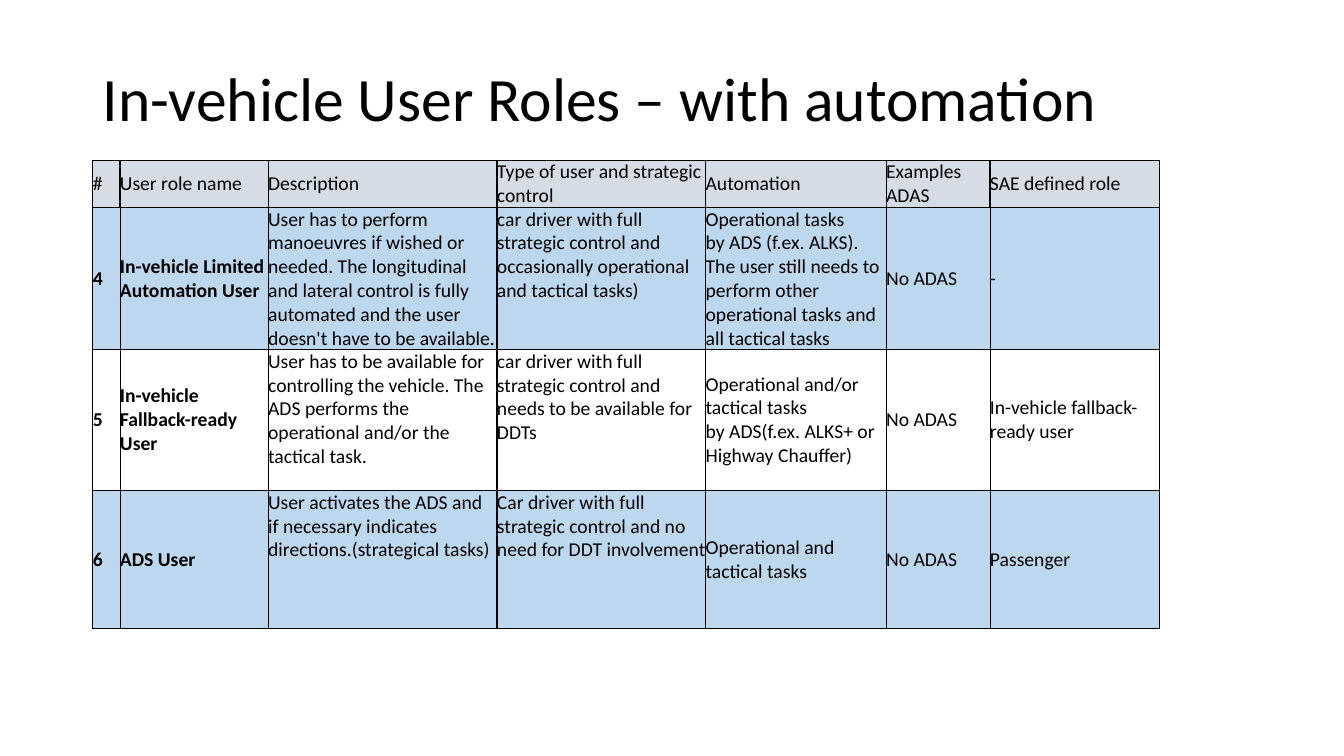
from copy import deepcopy

from lxml.etree import SubElement
from pptx import Presentation
from pptx.dml.color import RGBColor
from pptx.enum.text import MSO_ANCHOR as Anchor
from pptx.oxml.ns import qn
from pptx.util import Inches, Pt

HEADER_FILL = "D6DCE4"
BAND_FILL = "BDD7EE"
LINE_COLOR = "000000"

COLUMN_WIDTHS = [0.27, 1.47, 2.27, 2.07, 1.79, 1.03, 1.68]
ROW_HEIGHTS = [0.46, 1.41, 1.4, 1.37]
ROW_FILLS = [HEADER_FILL, BAND_FILL, None, BAND_FILL]
ROLES = [
    ["#", "User role name", "Description", "Type of user and strategic control",
     "Automation", "Examples ADAS", "SAE defined role"],
    ["4", "In-vehicle Limited Automation User",
     "User has to perform manoeuvres if wished or needed. The longitudinal and lateral "
     "control is fully automated and the user doesn't have to be available.",
     "car driver with full strategic control and occasionally operational and tactical tasks)",
     "Operational tasks\nby ADS (f.ex. ALKS).\nThe user still needs to perform other "
     "operational tasks and all tactical tasks",
     "No ADAS", "-"],
    ["5", "In-vehicle Fallback-ready User",
     "User has to be available for controlling the vehicle. The ADS performs the "
     "operational and/or the tactical task.",
     "car driver with full strategic control and needs to be available for DDTs",
     "Operational and/or tactical tasks\nby ADS(f.ex. ALKS+ or Highway Chauffer)",
     "No ADAS", "In-vehicle fallback-ready user"],
    ["6", "ADS User",
     "User activates the ADS and if necessary indicates directions.(strategical tasks)",
     "Car driver with full strategic control and no need for DDT involvement",
     "Operational and tactical tasks", "No ADAS", "Passenger"],
]


def write_text(text_frame, text, size=14, bold=False, color="000000", line_spacing=None):
    """Fill the first paragraph; line feeds become line breaks of the same size."""
    paragraph = text_frame.paragraphs[0]
    paragraph.text = text
    if line_spacing:
        paragraph.line_spacing = line_spacing
    for run in paragraph.runs:
        run.font.name = "Calibri"
        run.font.size = Pt(size)
        run.font.bold = bold
        run.font.color.rgb = RGBColor.from_string(color)
    for line_break in paragraph._p.findall(qn("a:br")):
        line_break.append(deepcopy(paragraph.runs[0].font._element))


def set_borders(cell, widths):
    """Draw the left, right, top and bottom borders with widths in points."""
    properties = cell._tc.get_or_add_tcPr()
    for side, width in zip("LRTB", widths):
        line = SubElement(properties, qn(f"a:ln{side}"), w=str(Pt(width)))
        fill = SubElement(line, qn("a:solidFill"))
        SubElement(fill, qn("a:srgbClr"), val=LINE_COLOR)


presentation = Presentation()
presentation.slide_width = Inches(13.33)
presentation.slide_height = Inches(7.5)
slide = presentation.slides.add_slide(presentation.slide_layouts[6])

title = slide.shapes.add_textbox(Inches(0.92), Inches(0.4), Inches(11.5), Inches(1.22))
title.text_frame.word_wrap = True
title.text_frame.vertical_anchor = Anchor.MIDDLE
write_text(title.text_frame, "In-vehicle User Roles – with automation", size=44, line_spacing=0.9)

table_frame = slide.shapes.add_table(
    len(ROLES), len(COLUMN_WIDTHS), Inches(0.92), Inches(1.59),
    Inches(sum(COLUMN_WIDTHS)), Inches(sum(ROW_HEIGHTS)))
table = table_frame.table
table.first_row = False
table.horz_banding = False
for column, width in zip(table.columns, COLUMN_WIDTHS):
    column.width = Inches(width)
for row, height in zip(table.rows, ROW_HEIGHTS):
    row.height = Inches(height)

for row_index, role in enumerate(ROLES):
    is_header = row_index == 0
    thick_edges = range(1, 7) if is_header else range(2, 5)
    for column_index, text in enumerate(role):
        cell = table.cell(row_index, column_index)
        cell.margin_left = cell.margin_right = cell.margin_top = cell.margin_bottom = 0
        is_long_text = not is_header and column_index in (2, 3)
        cell.vertical_anchor = Anchor.TOP if is_long_text else Anchor.MIDDLE
        write_text(cell.text_frame, text, bold=not is_header and column_index < 2)

        sides = [1 if edge in thick_edges else 0.5 for edge in (column_index, column_index + 1)]
        levels = [1 if edge > 1 or column_index == 1 else 0.5
                  for edge in (row_index, row_index + 1)]
        set_borders(cell, sides + levels)
        if ROW_FILLS[row_index]:
            cell.fill.solid()
            cell.fill.fore_color.rgb = RGBColor.from_string(ROW_FILLS[row_index])
        else:
            cell.fill.background()

presentation.save("out.pptx")
